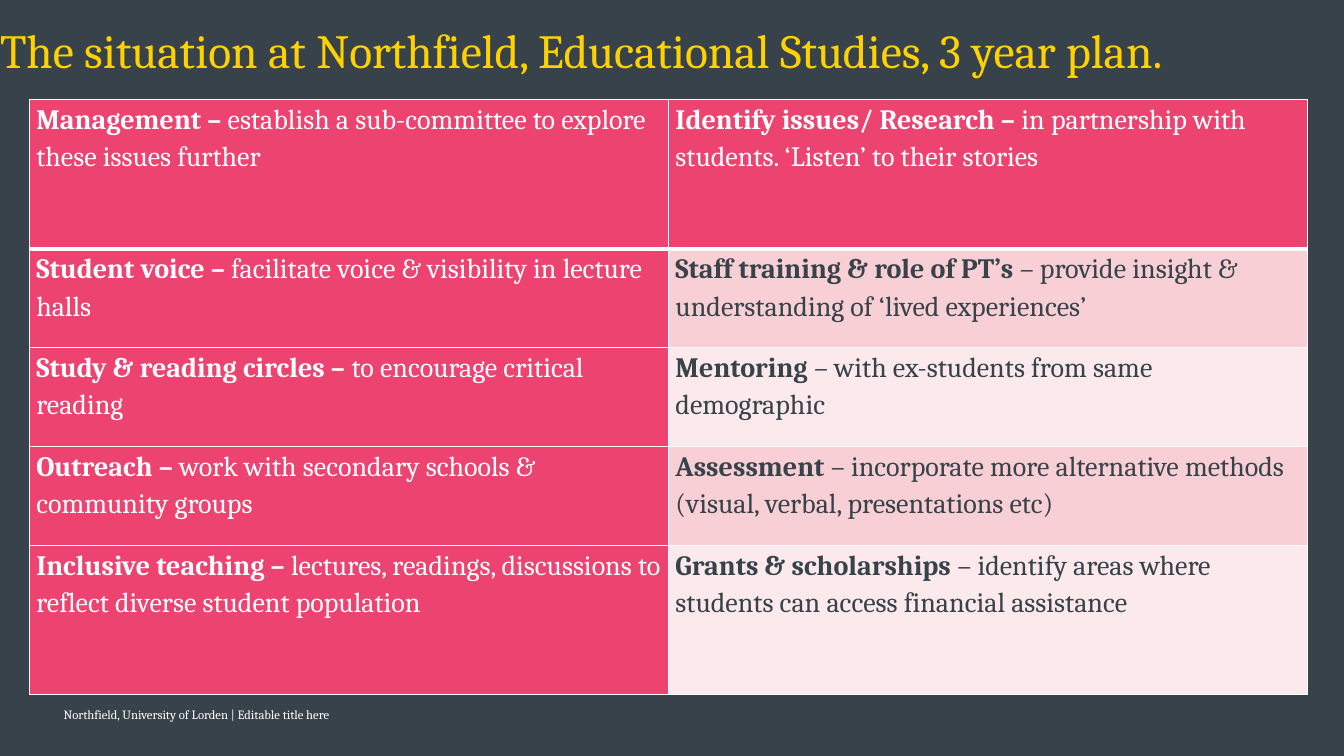
from lxml import etree
from pptx import Presentation
from pptx.dml.color import RGBColor
from pptx.enum.text import MSO_ANCHOR, MSO_AUTO_SIZE, PP_ALIGN
from pptx.oxml.ns import qn
from pptx.util import Inches, Pt

COLORS = {"slate": "37424A", "yellow": "FED100", "white": "FFFFFF",
          "pink": "EC4371", "blush": "F8CFD5", "pale": "FBE9EB"}


def add_run(p, text, size, color, bold=False):
    r = p.add_run()
    r.text = text
    for name, value in {"name": "Cambria", "size": Pt(size), "bold": bold}.items():
        setattr(r.font, name, value)
    r.font.color.rgb = RGBColor.from_string(COLORS[color])


def add_border(cell, side, width):
    ln = etree.SubElement(cell._tc.get_or_add_tcPr(), qn(f"a:ln{side}"), w=str(Pt(width)))
    fill = etree.SubElement(ln, qn("a:solidFill"))
    etree.SubElement(fill, qn("a:srgbClr"), val=COLORS["white"])


prs = Presentation()
prs.slide_width, prs.slide_height = Inches(13.33), Inches(7.5)
s = prs.slides.add_slide(prs.slide_layouts[5])
s.background.fill.solid()
s.background.fill.fore_color.rgb = RGBColor.from_string(COLORS["slate"])

# Title and footer
title = s.shapes.title
title.left, title.top, title.width, title.height = map(Inches, (0, 0.01, 13.33, 1.03))
footer = s.shapes.add_textbox(Inches(0.63), Inches(7.01), Inches(5.91), Inches(0.2))
for sp, anchor, spacing, size, color, text in (
    (title, MSO_ANCHOR.MIDDLE, 0.9, 34, "yellow",
     "The situation at Northfield, Educational Studies, 3 year plan."),
    (footer, MSO_ANCHOR.TOP, 1, 9, "white",
     "Northfield, University of Lorden | Editable title here"),
):
    tf = sp.text_frame
    for name, value in {"margin_left": 0, "margin_right": 0, "margin_top": 0,
                        "margin_bottom": 0, "word_wrap": True,
                        "auto_size": MSO_AUTO_SIZE.NONE,
                        "vertical_anchor": anchor}.items():
        setattr(tf, name, value)
    p = tf.paragraphs[0]
    p.alignment, p.line_spacing = PP_ALIGN.LEFT, spacing
    add_run(p, text, size, color)

# Plan table: bold heading and explanation in each cell
plan = [
    [("Management – ", "establish a sub-committee to explore these issues further"),
     ("Identify issues/ Research – ",
      "in partnership with students. ‘Listen’ to their stories")],
    [("Student voice – ", "facilitate voice & visibility in lecture halls"),
     ("Staff training & role of PT’s ",
      "– provide insight & understanding of ‘lived experiences’")],
    [("Study & reading circles – ", "to encourage critical reading"),
     ("Mentoring", " – with ex-students from same demographic")],
    [("Outreach – ", "work with secondary schools & community groups"),
     ("Assessment",
      " – incorporate more alternative methods (visual, verbal, presentations etc)")],
    [("Inclusive teaching – ",
      "lectures, readings, discussions to reflect diverse student population"),
     ("Grants & scholarships ",
      "– identify areas where students can access financial assistance")],
]
row_heights = [1.48, 0.98, 0.98, 0.98, 1.48]
table = s.shapes.add_table(len(plan), 2, Inches(0.29), Inches(0.99),
                           Inches(12.68), Inches(sum(row_heights))).table
for col in table.columns:
    col.width = Inches(6.34)

for i, (row, height) in enumerate(zip(plan, row_heights)):
    table.rows[i].height = Inches(height)
    for j, (heading, detail) in enumerate(row):
        cell = table.cell(i, j)
        for name, value in {"margin_left": Inches(0.07), "margin_right": Inches(0.07),
                            "margin_top": 0, "margin_bottom": 0}.items():
            setattr(cell, name, value)

        # A thicker rule separates the first row from the rest
        widths = {"L": 1, "R": 1, "T": 3 if i == 1 else 1, "B": 3 if i == 0 else 1}
        for side, width in widths.items():
            add_border(cell, side, width)

        # First row and column are pink; the rest is banded
        strong = i == 0 or j == 0
        fill = "pink" if strong else ("blush" if i % 2 else "pale")
        cell.fill.solid()
        cell.fill.fore_color.rgb = RGBColor.from_string(COLORS[fill])

        p = cell.text_frame.paragraphs[0]
        p.line_spacing = 1.15
        color = "white" if strong else "slate"
        add_run(p, heading, 20, color, bold=True)
        add_run(p, detail, 20, color)

prs.save("out.pptx")
